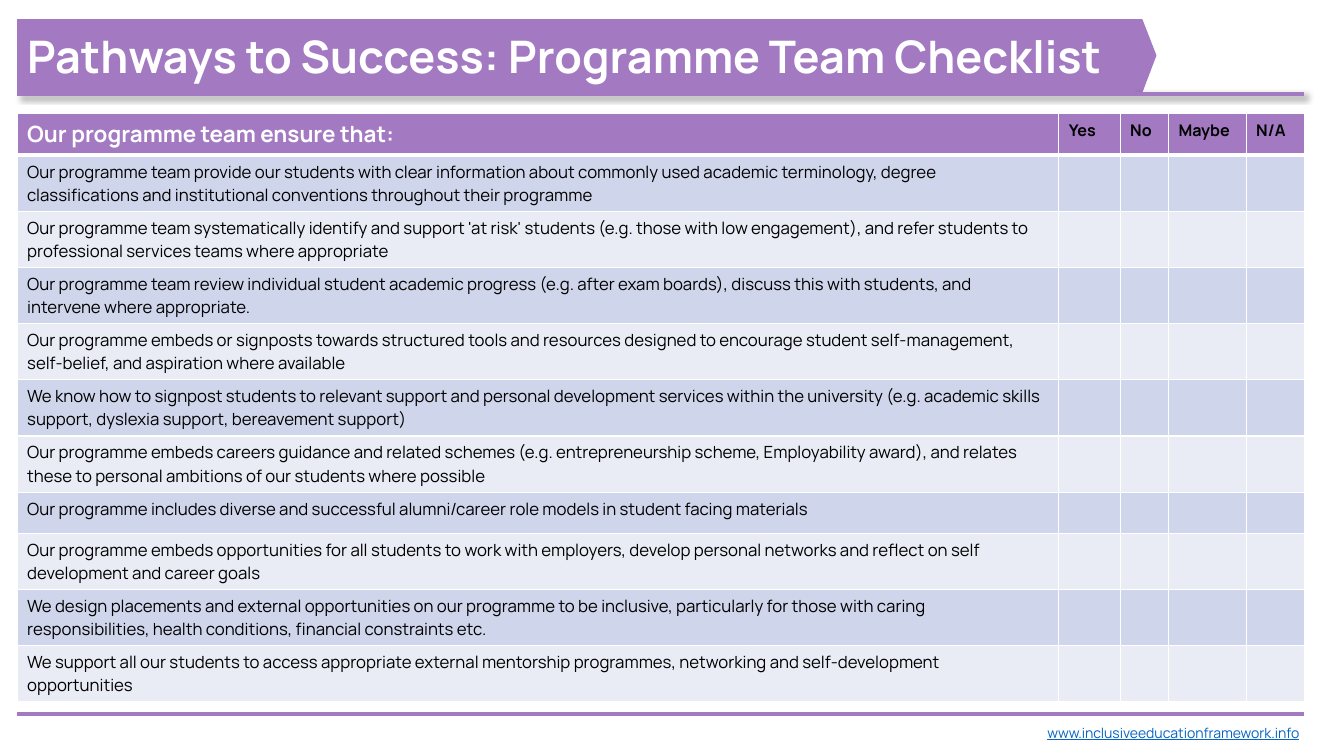
from lxml import etree
from pptx import Presentation
from pptx.dml.color import RGBColor
from pptx.enum.shapes import MSO_CONNECTOR, MSO_SHAPE
from pptx.enum.text import MSO_ANCHOR, PP_ALIGN
from pptx.oxml import parse_xml
from pptx.oxml.ns import qn
from pptx.util import Inches, Pt

STRAIGHT = MSO_CONNECTOR.STRAIGHT
RECTANGLE = MSO_SHAPE.RECTANGLE
MIDDLE = MSO_ANCHOR.MIDDLE
LEFT = PP_ALIGN.LEFT

PURPLE = RGBColor(0xA3, 0x7A, 0xC1)
WHITE = RGBColor(0xFF, 0xFF, 0xFF)
BLACK = RGBColor(0x00, 0x00, 0x00)
BAND_DARK = RGBColor(0xCF, 0xD5, 0xEA)
BAND_LIGHT = RGBColor(0xE9, 0xEB, 0xF5)
LINK_BLUE = RGBColor(0x05, 0x63, 0xC1)

DRAWING_NS = "http://schemas.openxmlformats.org/drawingml/2006/main"
MARGIN, CONTENT_RIGHT = 0.17, 12.93

COLUMN_WIDTHS = [10.33, 0.61, 0.48, 0.77, 0.58]
ROW_HEIGHT = 0.41
HEADERS = ["Our programme team ensure that:", "Yes", "No", "Maybe", "N/A"]
CHECKS = [
    "Our programme team provide our students with clear information about commonly used academic "
    "terminology, degree classifications and institutional conventions throughout their programme",
    "Our programme team systematically identify and support 'at risk' students (e.g. those with low "
    "engagement), and refer students to professional services teams where appropriate",
    "Our programme team review individual student academic progress (e.g. after exam boards), "
    "discuss this with students, and intervene where appropriate.",
    "Our programme embeds or signposts towards structured tools and resources designed to encourage "
    "student self-management, self-belief, and aspiration where available",
    "We know how to signpost students to relevant support and personal development services within "
    "the university (e.g. academic skills support, dyslexia support, bereavement support)",
    "Our programme embeds careers guidance and related schemes (e.g. entrepreneurship scheme, "
    "Employability award), and relates these to personal ambitions of our students where possible",
    "Our programme includes diverse and successful alumni/career role models in student facing "
    "materials",
    "Our programme embeds opportunities for all students to work with employers, develop personal "
    "networks and reflect on self development and career goals",
    "We design placements and external opportunities on our programme to be inclusive, particularly "
    "for those with caring responsibilities, health conditions, financial constraints etc.",
    "We support all our students to access appropriate external mentorship programmes, networking "
    "and self-development opportunities",
]


class ChecklistSlide:
    def __init__(self, slide, font="Manrope", color=PURPLE):
        self.slide, self.font, self.color = slide, font, color

    def set_text(self, tf, text, size, color, bold=False, underline=False):
        tf.text = text
        p = tf.paragraphs[0]
        p.alignment = LEFT
        # Paragraph font also sizes the empty cells
        for font in [p.font] + [r.font for r in p.runs]:
            font.name, font.size = self.font, Pt(size)
            font.bold, font.underline = bold, underline
            font.color.rgb = color

    def paint(self, shape):
        shape.shadow.inherit = False
        shape.fill.solid()
        shape.fill.fore_color.rgb = self.color
        shape.line.fill.background()

    def title(self, text, x, y, w, h):
        s = self.slide.shapes.add_shape(RECTANGLE, Inches(x), Inches(y), Inches(w), Inches(h))
        self.paint(s)
        tf = s.text_frame
        tf.word_wrap = True
        tf.vertical_anchor = MIDDLE
        self.set_text(tf, text, 32, WHITE, bold=True)

    def polygon(self, points):
        pts = [(Inches(x), Inches(y)) for x, y in points]
        fb = self.slide.shapes.build_freeform(*pts[0])
        fb.add_line_segments(pts[1:], close=True)
        self.paint(fb.convert_to_shape())

    def rule(self, y, shadow=False):
        line = self.slide.shapes.add_connector(
            STRAIGHT, Inches(MARGIN), Inches(y), Inches(CONTENT_RIGHT), Inches(y))
        line.line.color.rgb = self.color
        line.line.width = Pt(3)
        effects = etree.SubElement(line._element.spPr, qn("a:effectLst"))
        if shadow:
            effects.append(parse_xml(
                f'<a:outerShdw xmlns:a="{DRAWING_NS}" blurRad="{Pt(4)}" dist="{Pt(3)}" '
                'dir="2700000" algn="tl" rotWithShape="0"><a:srgbClr val="000000">'
                '<a:alpha val="40000"/></a:srgbClr></a:outerShdw>'))

    def link(self, text, x, y, w, h):
        tf = self.slide.shapes.add_textbox(Inches(x), Inches(y), Inches(w), Inches(h)).text_frame
        tf.word_wrap = True
        self.set_text(tf, text, 10, LINK_BLUE, underline=True)

    def cell(self, cell, fill, top=1, bottom=1):
        tcPr = cell._tc.get_or_add_tcPr()
        for side, width in (("L", 1), ("R", 1), ("T", top), ("B", bottom)):
            tcPr.append(parse_xml(
                f'<a:ln{side} xmlns:a="{DRAWING_NS}" w="{Pt(width)}"><a:solidFill>'
                f'<a:srgbClr val="{WHITE}"/></a:solidFill></a:ln{side}>'))
        cell.fill.solid()
        cell.fill.fore_color.rgb = fill

    def checklist(self, x, y):
        rows = len(CHECKS) + 1
        table = self.slide.shapes.add_table(
            rows, len(HEADERS), Inches(x), Inches(y),
            Inches(sum(COLUMN_WIDTHS)), Inches(rows * ROW_HEIGHT)).table
        for column, width in zip(table.columns, COLUMN_WIDTHS):
            column.width = Inches(width)
        for row in table.rows:
            row.height = Inches(ROW_HEIGHT)
        # Header row
        for c, text in enumerate(HEADERS):
            cell = table.cell(0, c)
            self.cell(cell, self.color, bottom=3)
            size, color = (16, WHITE) if c == 0 else (11.5, BLACK)
            self.set_text(cell.text_frame, text, size, color, bold=True)
        # Banded rows with empty answer cells
        for r, check in enumerate(CHECKS, start=1):
            for c in range(len(HEADERS)):
                cell = table.cell(r, c)
                self.cell(cell, BAND_DARK if r % 2 else BAND_LIGHT, top=3 if r == 1 else 1)
                self.set_text(cell.text_frame, check if c == 0 else "", 12, BLACK)


def main():
    prs = Presentation()
    prs.slide_width, prs.slide_height = Inches(13.33), Inches(7.5)
    page = ChecklistSlide(prs.slides.add_slide(prs.slide_layouts[6]))

    # Checklist
    page.checklist(MARGIN, 1.13)

    # Pointed end of the title banner
    page.polygon([(11.33, 0.19), (9.58, 0.19), (9.58, 0.92), (11.33, 0.92), (11.47, 0.55)])

    # Footer
    page.rule(7.08)
    page.link("www.inclusiveeducationframework.info", 10.29, 7.14, 2.8, 0.27)

    # Title
    page.rule(0.93, shadow=True)
    page.title("Pathways to Success: Programme Team Checklist", MARGIN, 0.19, 11.09, 0.73)

    prs.save("out.pptx")


if __name__ == "__main__":
    main()
